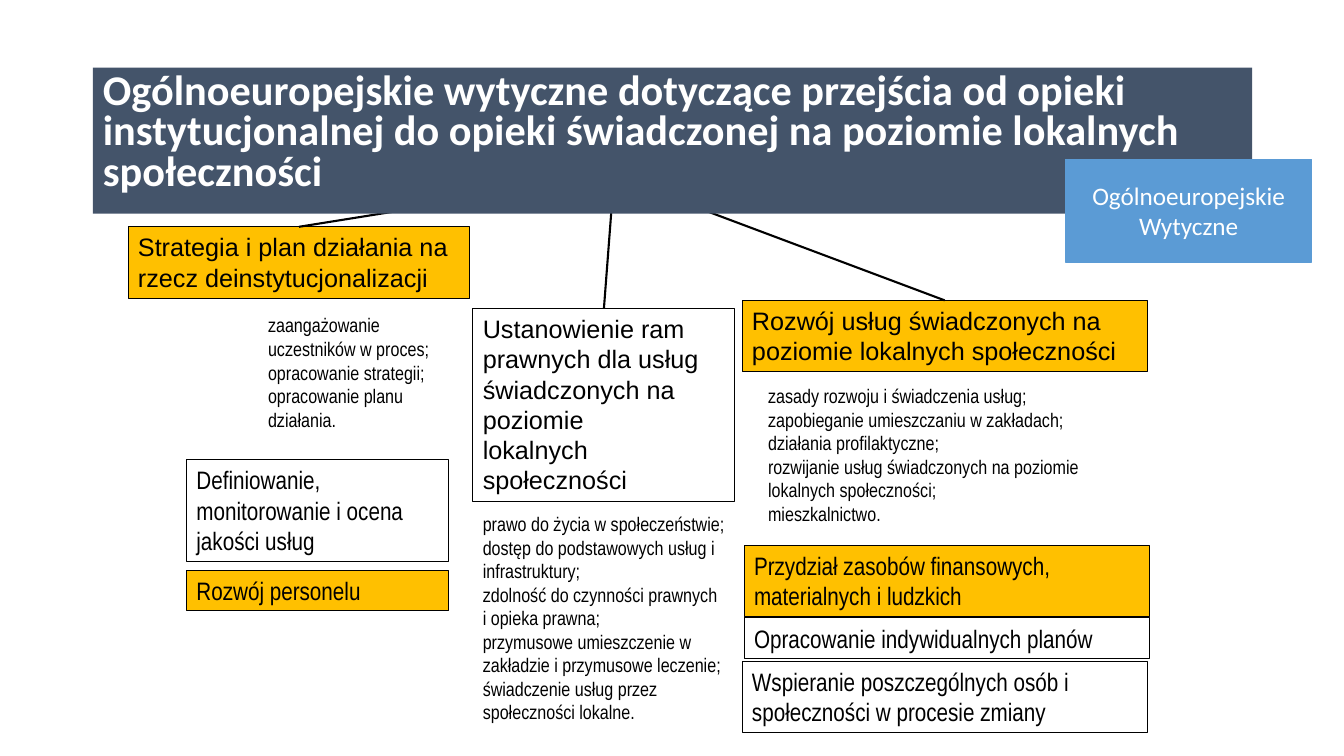
from dataclasses import dataclass

from lxml import etree
from pptx import Presentation
from pptx.dml.color import RGBColor
from pptx.enum.shapes import MSO_CONNECTOR, MSO_SHAPE
from pptx.enum.text import MSO_ANCHOR, MSO_AUTO_SIZE, PP_ALIGN
from pptx.oxml.ns import qn
from pptx.util import Inches, Pt

RECT = MSO_SHAPE.RECTANGLE
LINE = MSO_CONNECTOR.STRAIGHT
TOP, MID = MSO_ANCHOR.TOP, MSO_ANCHOR.MIDDLE
LEFT, CENTER = PP_ALIGN.LEFT, PP_ALIGN.CENTER
GROW, FIXED = MSO_AUTO_SIZE.SHAPE_TO_FIT_TEXT, MSO_AUTO_SIZE.NONE


@dataclass(frozen=True)
class Theme:
    gold: str = "FFC000"
    navy: str = "44546A"
    blue: str = "5B9BD5"
    white: str = "FFFFFF"
    black: str = "000000"
    sans: str = "Arial"
    slim: str = "Arial Narrow"
    head: str = "Calibri"
    big: float = 30.2
    mid: float = 18
    small: float = 14
    edge: float = 0.75
    link: float = 1.5


T = Theme()

TITLE = [
    "Ogólnoeuropejskie wytyczne dotyczące przejścia od opieki "
    "instytucjonalnej do opieki świadczonej na poziomie lokalnych",
    "społeczności",
]
TITLE_AT = (0.92, 0.67, 11.5, 1.45)
BADGE = "Ogólnoeuropejskie Wytyczne"
BADGE_AT = (10.57, 1.58, 2.44, 1.02)
HUB = (6.09, 1.75)

PILLARS = [
    ((1.27, 2.25, 3.39, 0.71), T.gold,
     ["Strategia i plan działania na rzecz deinstytucjonalizacji"]),
    ((4.69, 3.06, 2.6, 1.92), None,
     ["Ustanowienie ram prawnych dla usług świadczonych na poziomie",
      "lokalnych społeczności"]),
    ((7.36, 2.98, 4.02, 0.71), T.gold,
     ["Rozwój usług świadczonych na poziomie lokalnych społeczności"]),
]
NOTES = [
    ((2.56, 3.06, 1.89, 1.28),
     ["zaangażowanie uczestników w proces;",
      "opracowanie strategii;",
      "opracowanie planu działania."]),
    ((4.69, 5.03, 2.6, 2.22),
     ["prawo do życia w społeczeństwie;",
      "dostęp do podstawowych usług i infrastruktury;",
      "zdolność do czynności prawnych i opieka prawna;",
      "przymusowe umieszczenie w zakładzie i przymusowe leczenie;",
      "świadczenie usług przez społeczności lokalne."]),
    ((7.52, 3.76, 3.74, 1.51),
     ["zasady rozwoju i świadczenia usług;",
      "zapobieganie umieszczaniu w zakładach;",
      "działania profilaktyczne;",
      "rozwijanie usług świadczonych na poziomie lokalnych społeczności;",
      "mieszkalnictwo."]),
]
TASKS = [
    ((7.38, 5.41, 4.02, 0.71), T.gold,
     ["Przydział zasobów finansowych, materialnych i ludzkich"]),
    ((7.38, 6.13, 4.02, 0.4), None,
     ["Opracowanie indywidualnych planów"]),
    ((7.36, 6.56, 4.02, 0.71), None,
     ["Wspieranie poszczególnych osób i społeczności w procesie zmiany"]),
    ((1.85, 4.56, 2.6, 1.01), T.white,
     ["Definiowanie, monitorowanie i ocena jakości usług"]),
    ((1.85, 5.66, 2.6, 0.4), T.gold, ["Rozwój personelu"]),
]


def rgb(code):
    return RGBColor.from_string(code)


def add_run(para, text, font, size, color, bold=False):
    run = para.add_run()
    run.text = text
    run.font.name = font
    run.font.size = Pt(size)
    run.font.bold = bold
    run.font.color.rgb = rgb(color)


def write(shape, lines, font, size, color=T.black, align=LEFT,
          anchor=TOP, fit=GROW):
    frame = shape.text_frame
    frame.word_wrap = True
    frame.auto_size = fit
    frame.vertical_anchor = anchor
    for i, text in enumerate(lines):
        para = frame.add_paragraph() if i else frame.paragraphs[0]
        para.alignment = align
        add_run(para, text, font, size, color)


def add_box(slide, at, fill, edge=T.black, width=T.edge):
    box = slide.shapes.add_shape(RECT, *map(Inches, at))
    box.shadow.inherit = False
    if fill:
        box.fill.solid()
        box.fill.fore_color.rgb = rgb(fill)
    else:
        box.fill.background()
    box.line.color.rgb = rgb(edge)
    box.line.width = Pt(width)
    return box


def add_link(slide, box):
    x, y = map(Inches, HUB)
    link = slide.shapes.add_connector(LINE, x, y, x, y)
    link.end_connect(box, 0)
    link.line.color.rgb = rgb(T.black)
    link.line.width = Pt(T.link)
    etree.SubElement(link.element.spPr, qn("a:effectLst"))


def set_title(title):
    title.left, title.top, title.width, title.height = map(Inches, TITLE_AT)
    title.fill.solid()
    title.fill.fore_color.rgb = rgb(T.navy)
    frame = title.text_frame
    frame.word_wrap = True
    frame.auto_size = FIXED
    frame.vertical_anchor = TOP
    para = frame.paragraphs[0]
    para.alignment = LEFT
    para.line_spacing = 0.8
    for i, text in enumerate(TITLE):
        if i:
            para.add_line_break()
        add_run(para, text, T.head, T.big, T.white, True)
    title.element.getparent().append(title.element)


def main():
    deck = Presentation()
    deck.slide_width, deck.slide_height = Inches(13.33), Inches(7.5)
    slide = deck.slides.add_slide(deck.slide_layouts[5])

    for at, fill, lines in PILLARS:
        box = add_box(slide, at, fill)
        write(box, lines, T.sans, T.mid)
        add_link(slide, box)
    for at, lines in NOTES:
        note = slide.shapes.add_textbox(*map(Inches, at))
        write(note, lines, T.slim, T.small)
    for at, fill, lines in TASKS:
        write(add_box(slide, at, fill), lines, T.slim, T.mid)

    set_title(slide.shapes.title)
    badge = add_box(slide, BADGE_AT, T.blue, T.blue, 1)
    write(badge, [BADGE], T.head, T.mid, T.white, CENTER, MID, FIXED)
    deck.save("out.pptx")


if __name__ == "__main__":
    main()
